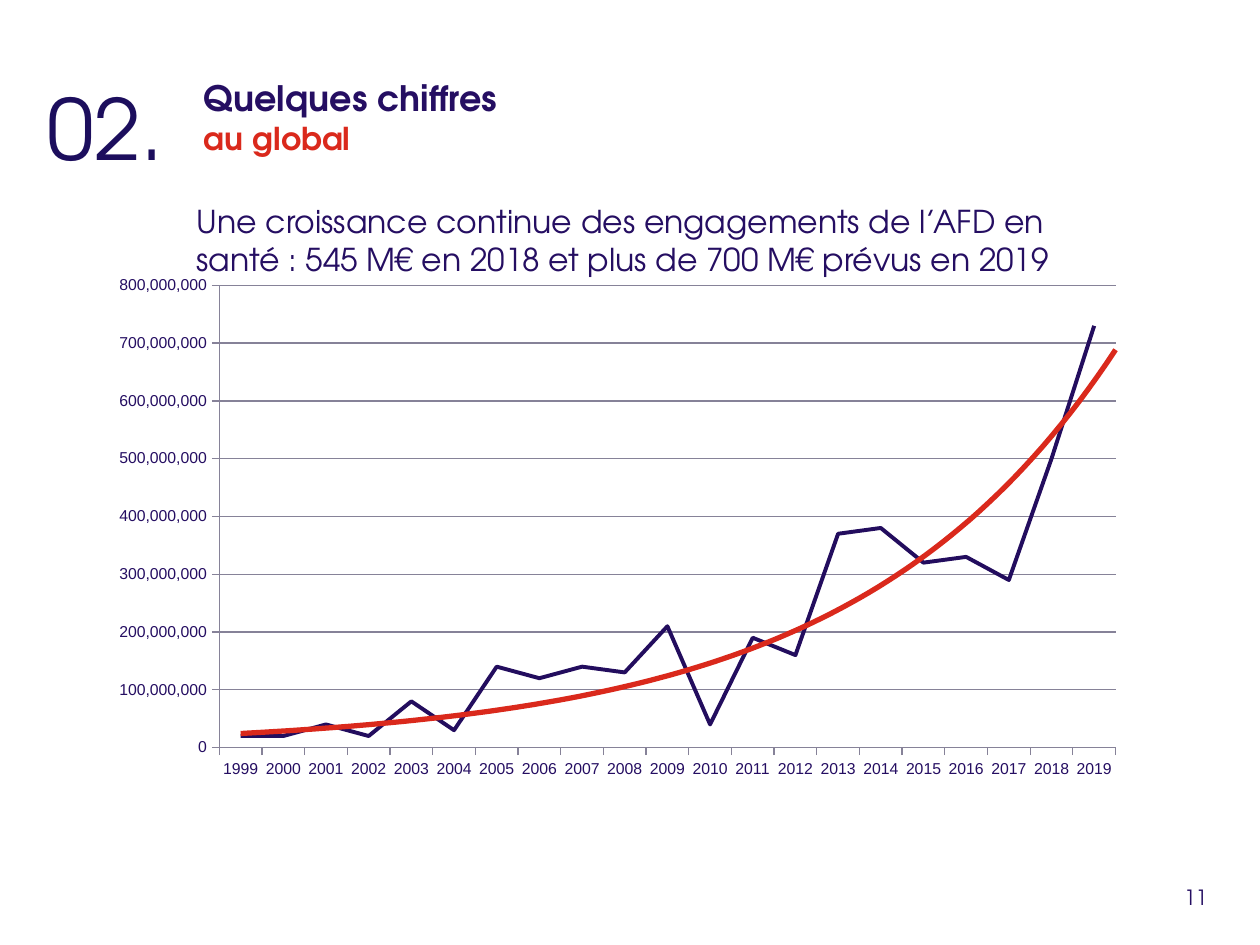
import pptx
import pptx.chart.data
import pptx.dml.color
import pptx.enum.chart
import pptx.enum.text
import pptx.oxml
import pptx.oxml.ns
import pptx.util

Cm = pptx.util.Cm
Pt = pptx.util.Pt

COLORS = {"ink": "250E62", "deep": "1C0E5D", "line": "230D5E", "red": "DA291C", "grid": "868298"}
FACE = "TeX Gyre Adventor"
YEARS = [str(year) for year in range(1999, 2020)]
MILLIONS = [20, 20, 40, 20, 80, 30, 140, 120, 140, 130, 210,
            40, 190, 160, 370, 380, 320, 330, 290, 500, 730]


def rgb(name):
    return pptx.dml.color.RGBColor.from_string(COLORS[name])


def set_all(target, values):
    for key, value in values.items():
        setattr(target, key, value)


def style_font(font, size, color, face=FACE, bold=False):
    set_all(font, {"name": face, "size": Pt(size), "bold": bold})
    font.color.rgb = rgb(color)


def style_line(line, color, width):
    line.color.rgb = rgb(color)
    line.width = Pt(width)


def set_frame(frame, wrap=True):
    set_all(frame, {
        "word_wrap": wrap,
        "auto_size": pptx.enum.text.MSO_AUTO_SIZE.NONE,
        "vertical_anchor": pptx.enum.text.MSO_ANCHOR.TOP,
        "margin_left": Cm(0.25), "margin_right": Cm(0.25),
        "margin_top": Cm(0.13), "margin_bottom": Cm(0.13),
    })


def add_run(para, text, size, color, bold=False):
    run = para.add_run()
    run.text = text
    style_font(run.font, size, color, bold=bold)


def add_text(slide, place, text, size, color, wrap=True):
    box = slide.shapes.add_textbox(*map(Cm, place))
    set_frame(box.text_frame, wrap)
    add_run(box.text_frame.paragraphs[0], text, size, color)


def fill_title(slide):
    title = slide.shapes.title
    set_all(title, {"left": Cm(3.86), "top": Cm(1.42), "width": Cm(20.22), "height": Cm(0.99)})
    set_frame(title.text_frame)
    para = title.text_frame.paragraphs[0]
    set_all(para, {"alignment": pptx.enum.text.PP_ALIGN.LEFT, "line_spacing": 1.0, "space_before": Pt(0)})
    add_run(para, "Quelques chiffres", 20, "ink", True)
    para.add_line_break()
    add_run(para, "au global", 18, "red", True)


def add_trend(series):
    space = pptx.oxml.ns.nsdecls("c", "a")
    trend = pptx.oxml.parse_xml(
        f'<c:trendline {space}><c:spPr><a:ln w="{Pt(3)}"><a:solidFill>'
        f'<a:srgbClr val="{COLORS["red"]}"/></a:solidFill></a:ln></c:spPr>'
        '<c:trendlineType val="exp"/><c:forward val="0.5"/>'
        '<c:dispRSqr val="0"/><c:dispEq val="0"/></c:trendline>')
    series._element.find(pptx.oxml.ns.qn("c:cat")).addprevious(trend)


def set_plot(chart, left, top, width, height):
    parts = {"xMode": "edge", "yMode": "edge", "x": left, "y": top, "w": width, "h": height}
    body = "".join(f'<c:{key} val="{value}"/>' for key, value in parts.items())
    layout = pptx.oxml.parse_xml(
        f'<c:layout {pptx.oxml.ns.nsdecls("c")}><c:manualLayout>'
        f'<c:layoutTarget val="inner"/>{body}</c:manualLayout></c:layout>')
    area = chart._chartSpace.chart.plotArea
    for old in area.findall(pptx.oxml.ns.qn("c:layout")):
        area.remove(old)
    area.insert(0, layout)


def add_graph(slide):
    data = pptx.chart.data.CategoryChartData(number_format="#,##0")
    data.categories = YEARS
    data.add_series("Series 1", [value * 1_000_000 for value in MILLIONS])
    place = map(Cm, (1.9, 5.33, 21.01, 10.59))
    chart = slide.shapes.add_chart(pptx.enum.chart.XL_CHART_TYPE.LINE, *place, data).chart
    set_all(chart, {"has_title": False, "has_legend": False})
    style_font(chart.font, 9, "ink", "Arial")
    set_plot(chart, 0.12, 0.04, 0.86, 0.88)
    for axis in (chart.category_axis, chart.value_axis):
        axis.major_tick_mark = pptx.enum.chart.XL_TICK_MARK.OUTSIDE
        style_line(axis.format.line, "grid", 0.75)
    scale = chart.value_axis
    set_all(scale, {"minimum_scale": 0, "maximum_scale": 800_000_000,
                    "major_unit": 100_000_000, "has_major_gridlines": True})
    style_line(scale.major_gridlines.format.line, "grid", 0.75)
    set_all(scale.tick_labels, {"number_format": "#,##0", "number_format_is_linked": False})
    chart.plots[0].vary_by_categories = False
    series = chart.plots[0].series[0]
    series.smooth = False
    style_line(series.format.line, "line", 2.25)
    add_trend(series)


def main():
    deck = pptx.Presentation()
    set_all(deck, {"slide_width": Cm(25.4), "slide_height": Cm(19.05)})
    slide = deck.slides.add_slide(deck.slide_layouts[5])
    fill_title(slide)
    add_text(slide, (0.71, 1.42, 3, 2.21), "02.", 48, "deep", False)
    add_graph(slide)
    add_text(slide, (3.71, 3.94, 19.41, 1.8),
             "Une croissance continue des engagements de l’AFD en santé : "
             "545 M€ en 2018 et plus de 700 M€ prévus en 2019", 18, "ink")
    add_text(slide, (23.62, 17.7, 1.04, 0.76), "11", 12, "ink", False)
    deck.save("out.pptx")


if __name__ == "__main__":
    main()
